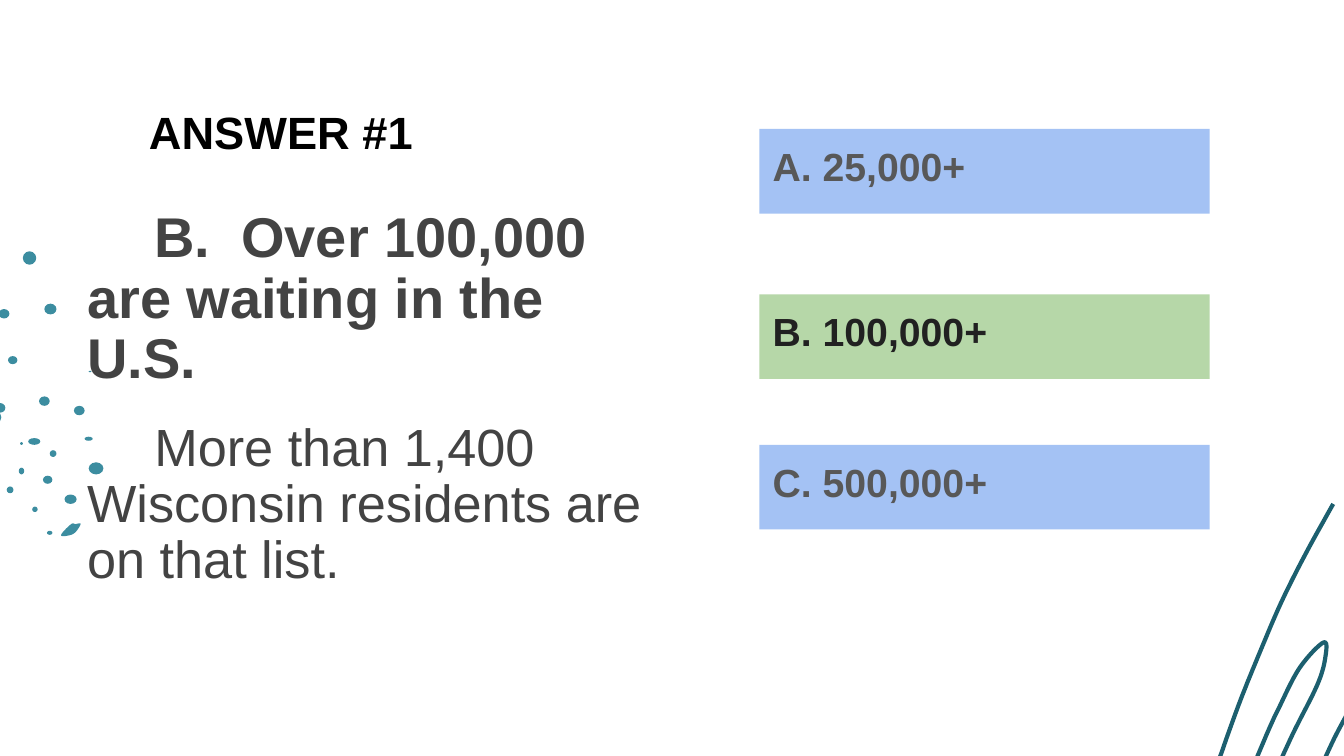
from pptx import Presentation
from pptx.dml.color import RGBColor as Color
from pptx.enum.shapes import MSO_SHAPE as Shape
from pptx.enum.text import MSO_ANCHOR as Anchor
from pptx.util import Inches, Pt

COLORS = {
    "dots": "3C8DA0", "scribble": "1C5F6F", "title": "000000", "body": "434343",
    "wrong": "A4C2F4", "right": "B6D7A8", "wrong text": "585858", "right text": "212121",
}
CELL = Inches(0.1)  # grid of 100 columns by 56.25 rows

deck = Presentation()
deck.slide_width = 100 * CELL
deck.slide_height = int(56.25 * CELL)
page = deck.slides.add_slide(deck.slide_layouts[6])


def add_text(text, *, place, size, color, bold=True, box=None, anchor=Anchor.TOP,
             indent=0, line_spacing=None, space_before=None):
    """Write a paragraph into a new box, or add it to the given one."""
    if box is None:
        box = page.shapes.add_textbox(*(int(value * CELL) for value in place))
        frame = box.text_frame
        frame.word_wrap = True
        frame.vertical_anchor = anchor
        frame.margin_left = frame.margin_right = CELL
        frame.margin_top = frame.margin_bottom = CELL
        para = frame.paragraphs[0]
    else:
        para = box.text_frame.add_paragraph()
    if indent:
        props = para._p.get_or_add_pPr()
        props.set("marL", "0")
        props.set("indent", str(int(indent * CELL)))
    if line_spacing:
        para.line_spacing = line_spacing
    if space_before:
        para.space_before = Pt(space_before)
    span = para.add_run()
    span.text = text
    span.font.name = "Arial"
    span.font.size = Pt(size)
    span.font.bold = bold
    span.font.color.rgb = Color.from_string(COLORS[color])
    return box


def add_curve(knots, closed=False, steps=8):
    """Draw a smooth Catmull-Rom outline through the knots."""
    if closed:
        padded = [knots[-1], *knots, knots[0], knots[1]]
    else:
        padded = [knots[0], *knots, knots[-1]]
    points = [knots[0]]
    for a, b, c, d in zip(padded, padded[1:], padded[2:], padded[3:]):
        for step in range(1, steps + 1):
            t = step / steps
            points.append(tuple(
                (2 * q + (r - p) * t + (2 * p - 5 * q + 4 * r - s) * t ** 2
                 + (3 * q - p - 3 * r + s) * t ** 3) / 2
                for p, q, r, s in zip(a, b, c, d)))
    points = [(int(x * CELL), int(y * CELL)) for x, y in points]
    builder = page.shapes.build_freeform(*points[0])
    builder.add_line_segments(points[1:], close=closed)
    curve = builder.convert_to_shape()
    curve.shadow.inherit = False
    return curve


# Leaf and dots on the left edge: column, row, width, height
leaf = add_curve([(5.6, 39), (5.3, 39), (4.6, 39.7), (4.7, 39.9), (5.5, 39.7), (6, 39)], closed=True)
leaf.fill.solid()
leaf.fill.fore_color.rgb = Color.from_string(COLORS["dots"])
leaf.line.fill.background()

dots = [
    (-1.2, 30.5, 1.3, 1.1), (1.5, 32.9, 0.2, 0.2), (1.4, 34.8, 0.4, 0.5),
    (2.4, 37.7, 0.4, 0.4), (3.5, 39.5, 0.4, 0.3), (4.8, 36.8, 0.9, 0.7),
    (3.2, 35.4, 0.7, 0.6), (0.5, 36.2, 0.5, 0.5), (3.7, 33.5, 0.5, 0.5),
    (2.1, 32.6, 0.9, 0.5), (2.9, 29.5, 0.8, 0.7), (-0.3, 30, 0.7, 0.7),
    (0.6, 26.5, 0.7, 0.6), (-0.1, 23, 0.8, 0.7), (6.6, 27.6, 0.2, 0.1),
    (5.5, 30.2, 0.8, 0.7), (6.3, 32.5, 0.6, 0.3), (6.6, 34.4, 1.1, 0.9),
    (3.3, 22.6, 0.9, 0.8), (1.7, 18.7, 1, 1),
]
for place in dots:
    dot = page.shapes.add_shape(Shape.OVAL, *(int(value * CELL) for value in place))
    dot.shadow.inherit = False
    dot.fill.solid()
    dot.fill.fore_color.rgb = Color.from_string(COLORS["dots"])
    dot.line.fill.background()

# Scribble in the lower right corner
scribble = add_curve([
    (99.2, 37.5), (97.1, 41.3), (95.3, 44.9), (93.8, 48.4), (92.3, 52.1), (91, 55.7),
    (90.6, 57.1), (91, 58.5), (91.8, 58.7), (92.8, 57.9), (94.4, 54.3), (95.1, 52.8),
    (96.7, 49.7), (98.5, 47.8), (98.6, 49), (98, 51), (96.2, 54.6), (94.5, 58.3),
    (93.4, 60.3), (93, 61.8), (93.2, 63.6), (94.3, 63.8), (95.7, 62.9), (96.6, 61),
    (97.6, 58.7), (99.3, 54.9), (101.2, 51.5), (102.5, 49.7), (103.9, 48.8),
    (104.2, 50.5), (102.6, 55.2), (100.9, 58.2), (99, 61.8), (97.5, 65.5), (97.3, 66.7),
    (98, 67.1), (99.4, 65.9), (100.4, 64.3), (102, 60.6), (103.2, 58), (105.9, 52.9),
    (107.1, 51.8), (108.1, 52), (108.4, 53.5), (107.8, 55.6), (104.1, 62.6), (102, 66),
    (101, 68.2), (101.3, 69.5), (102.9, 69.7), (104.3, 68.4), (105.3, 66.5), (110.1, 56.5),
])
scribble.fill.background()
scribble.line.color.rgb = Color.from_string(COLORS["scribble"])
scribble.line.width = Pt(2.25)

# Answer and its explanation
body_place = (5.5, 14.6, 44.5, 38.4)
body = add_text("B.  Over 100,000 are waiting in the U.S.", place=body_place,
                size=30, color="body", indent=5, line_spacing=0.9)
add_text("More than 1,400 Wisconsin residents are on that list.", place=body_place,
         box=body, size=28, color="body", bold=False, indent=5, line_spacing=0.9,
         space_before=16)
add_text("ANSWER #1", place=(10.1, 6.6, 89.2, 6.3), size=24.2, color="title",
         anchor=Anchor.MIDDLE)

# Choices, with the right one in green
for row, text, kind in [(9.6, "A. 25,000+", "wrong"),
                        (21.9, "B. 100,000+", "right"),
                        (33.1, "C. 500,000+", "wrong")]:
    bar = page.shapes.add_shape(
        Shape.RECTANGLE, *(int(value * CELL) for value in (56.5, row, 33.5, 6.3)))
    bar.shadow.inherit = False
    bar.fill.solid()
    bar.fill.fore_color.rgb = Color.from_string(COLORS[kind])
    bar.line.fill.background()
    add_text(text, place=(56.5, row, 33.5, 5.2), size=21, color=f"{kind} text")

deck.save("out.pptx")
